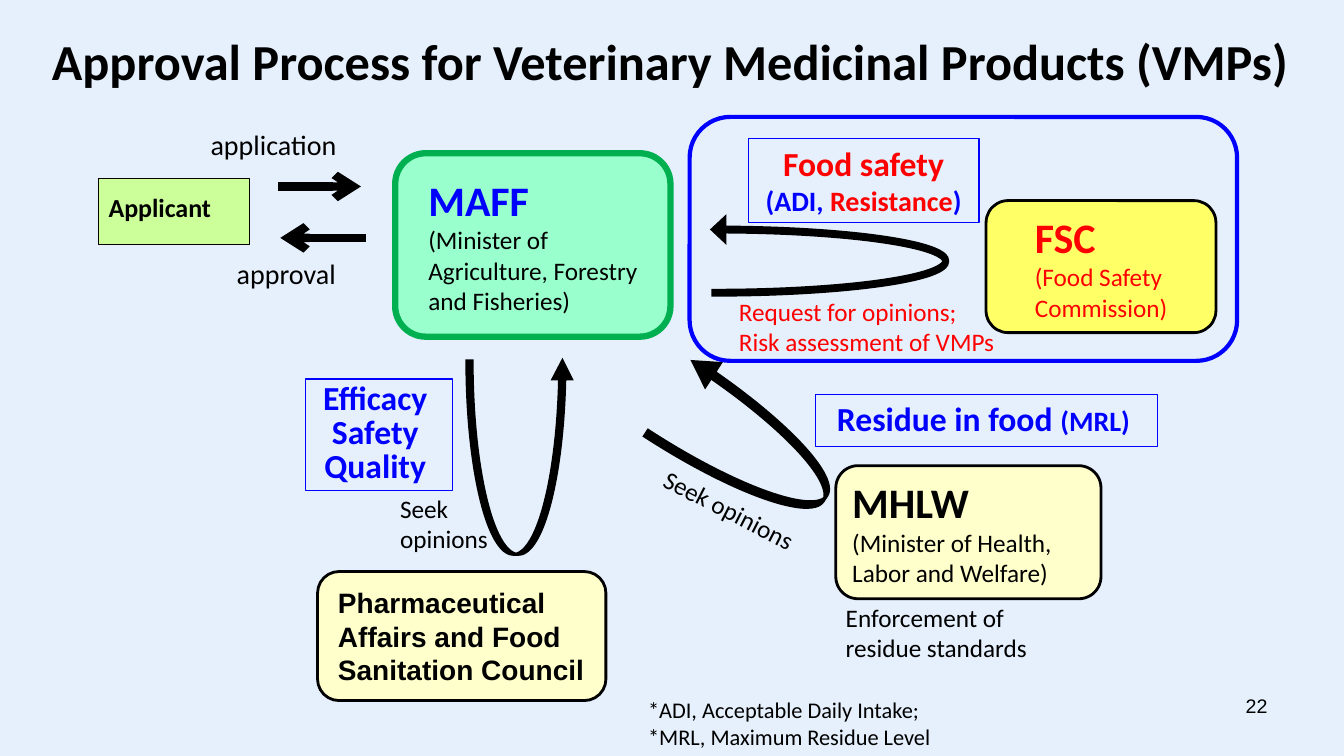
from lxml import etree
from pptx import Presentation
from pptx.dml.color import RGBColor
from pptx.enum import shapes, text
from pptx.oxml import ns
from pptx.util import Inches, Pt

BACKGROUND = RGBColor(0xE5, 0xF0, 0xFC)
BLACK = RGBColor(0, 0, 0)
BLUE = RGBColor(0, 0, 0xFF)
RED = RGBColor(0xFF, 0, 0)
GREEN = RGBColor(0, 0xB0, 0x50)
MINT = RGBColor(0x99, 0xFF, 0xCC)
LIME = RGBColor(0xCC, 0xFF, 0x99)
CREAM = RGBColor(0xFF, 0xFF, 0xCC)
YELLOW = RGBColor(0xFF, 0xFF, 0x66)

SHAPE = shapes.MSO_SHAPE
ALIGN = text.PP_ALIGN
ANCHOR = text.MSO_ANCHOR


def write(shape, paragraphs, size=18, color=BLACK, bold=False, font="Calibri",
          align=ALIGN.LEFT, anchor=ANCHOR.TOP, wrap=True, spacing=None,
          inset=0.1, baseline=None):
    """Fill a shape; a paragraph is a string or a list of (string, overrides)."""
    frame = shape.text_frame
    frame.word_wrap = wrap
    frame.vertical_anchor = anchor
    frame.margin_left = Inches(inset)
    for index, content in enumerate(paragraphs):
        paragraph = frame.add_paragraph() if index else frame.paragraphs[0]
        paragraph.alignment = align
        if spacing:
            paragraph.line_spacing = Pt(spacing)
        runs = [(content, {})] if isinstance(content, str) else content
        for string, overrides in runs:
            run = paragraph.add_run()
            run.text = string
            run.font.name = font
            run.font.size = Pt(overrides.get("size", size))
            run.font.bold = overrides.get("bold", bold)
            run.font.color.rgb = overrides.get("color", color)
            if baseline:
                run.font._element.set("baseline", str(baseline))


def add_box(slide, kind, left, top, width, height, fill=None, line=BLACK, weight=0.75):
    shape = slide.shapes.add_shape(
        kind, Inches(left), Inches(top), Inches(width), Inches(height))
    shape.shadow.inherit = False
    if fill is None:
        shape.fill.background()
    else:
        shape.fill.solid()
        shape.fill.fore_color.rgb = fill
    shape.line.color.rgb = line
    shape.line.width = Pt(weight)
    return shape


def add_label(slide, left, top, width, height, paragraphs, rotation=0, grow=False, **style):
    label = slide.shapes.add_textbox(
        Inches(left), Inches(top), Inches(width), Inches(height))
    label.rotation = rotation
    write(label, paragraphs, **style)
    if grow:
        label.text_frame.auto_size = text.MSO_AUTO_SIZE.SHAPE_TO_FIT_TEXT


def add_body(slide, place, name, role, fill, color=BLACK, line=BLACK, weight=2, inset=0.1):
    """Add a rounded box with an organisation's short name and its role."""
    body = add_box(slide, SHAPE.ROUNDED_RECTANGLE, *place, fill, line, weight)
    write(body, [[(name, {"size": 30, "bold": True})], role],
          color=color, anchor=ANCHOR.MIDDLE, inset=inset)


def add_topic(slide, place, paragraphs, **style):
    topic = add_box(slide, SHAPE.RECTANGLE, *place, line=BLUE)
    write(topic, paragraphs, size=24, color=BLUE, bold=True, align=ALIGN.CENTER, **style)


def add_arrow(slide, start, end, y):
    arrow = slide.shapes.add_connector(
        shapes.MSO_CONNECTOR.STRAIGHT, Inches(start), Inches(y), Inches(end), Inches(y))
    arrow.line.color.rgb = BLACK
    arrow.line.width = Pt(6)
    etree.SubElement(arrow.line._get_or_add_ln(), ns.qn("a:tailEnd"), type="arrow")
    etree.SubElement(arrow._element.spPr, ns.qn("a:effectLst"))


def add_loop(slide, place, rotation, adjustments, weight=2):
    """Add a mirrored, sharp-cornered curved arrow for a request that comes back."""
    loop = add_box(slide, SHAPE.CURVED_DOWN_ARROW, *place, BLACK, BLACK, weight)
    loop.rotation = rotation
    loop._element.spPr.xfrm.set("flipH", "1")
    etree.SubElement(loop.line._get_or_add_ln(), ns.qn("a:miter"), lim="800000")
    for index, value in enumerate(adjustments):
        loop.adjustments[index] = value


def add_applicant(slide):
    applicant = add_box(slide, SHAPE.RECTANGLE, 0.98, 1.77, 1.5, 0.66, LIME)
    write(applicant, ["Applicant"], size=32, bold=True, anchor=ANCHOR.BOTTOM, baseline=30000)
    side_label = dict(size=20, anchor=ANCHOR.MIDDLE)
    add_label(slide, 1.99, 1.26, 1.6, 0.34, ["application"], **side_label)
    add_arrow(slide, 2.76, 3.58, 1.85)
    add_label(slide, 2.25, 2.52, 1.4, 0.39, ["approval"], **side_label)
    add_arrow(slide, 3.63, 2.78, 2.36)


def add_residue_review(slide):
    add_body(slide, (8.29, 4.62, 2.63, 1.32), "MHLW",
             "(Minister of Health, Labor and Welfare)", CREAM)
    add_topic(slide, (8.09, 3.91, 3.39, 0.52),
              [[("Residue in food ", {}), ("(MRL) ", {"size": 20})]],
              anchor=ANCHOR.MIDDLE, spacing=25)
    add_label(slide, 8.29, 6.01, 2.63, 0.53, ["Enforcement of", "residue standards"],
              anchor=ANCHOR.MIDDLE)
    add_loop(slide, (6.93, 3.48, 1.02, 1.84), 123, (0.068, 0.27, 0.235))
    add_label(slide, 6.43, 4.86, 1.62, 0.4, ["Seek opinions"],
              rotation=27.1, grow=True, wrap=False)


def add_food_safety_review(slide):
    add_body(slide, (9.78, 1.99, 2.28, 1.31), "FSC", "(Food Safety Commission)",
             YELLOW, color=RED, inset=0.42)
    add_topic(slide, (7.42, 1.37, 2.29, 0.84), [
        [("Food safety", {"color": RED})],
        [("(ADI, ", {"size": 20}), ("Resistance", {"size": 20, "color": RED}),
         (")", {"size": 20})]])
    add_label(slide, 7.23, 2.89, 2.76, 0.71,
              ["Request for opinions;", "Risk assessment of VMPs"],
              color=RED, grow=True, wrap=False)
    add_loop(slide, (7.88, 1.41, 0.71, 2.29), 90, (0.017, 0.216, 0.115), 4.75)


def add_council_review(slide):
    council = add_box(slide, SHAPE.ROUNDED_RECTANGLE, 3.15, 5.67, 2.86, 1.28, CREAM, weight=2)
    write(council, ["Pharmaceutical Affairs and Food Sanitation Council"], size=20,
          bold=True, font="Arial", anchor=ANCHOR.MIDDLE, inset=0.14)
    add_loop(slide, (4.63, 3.58, 1.04, 1.92), 180, (0.052, 0.176, 0.172))
    add_label(slide, 3.87, 4.84, 1.11, 0.71, ["Seek", "opinions"])
    add_topic(slide, (3.03, 3.76, 1.46, 1.11), ["Efficacy ", "Safety ", "Quality "], spacing=24)


def main():
    presentation = Presentation()
    presentation.slide_width = Inches(13.33)
    presentation.slide_height = Inches(7.5)
    slide = presentation.slides.add_slide(presentation.slide_layouts[6])
    slide.background.fill.solid()
    slide.background.fill.fore_color.rgb = BACKGROUND

    add_body(slide, (3.92, 1.52, 2.73, 1.82), "MAFF",
             [("(Minister of Agriculture, Forestry and Fisheries)", {"color": BLACK})],
             MINT, color=BLUE, line=GREEN, weight=4.5, inset=0.24)
    add_applicant(slide)
    add_residue_review(slide)
    add_food_safety_review(slide)
    add_label(slide, 0.3, 0.13, 12.7, 0.94,
              ["Approval Process for Veterinary Medicinal Products (VMPs)"],
              size=36, bold=True, align=ALIGN.CENTER, anchor=ANCHOR.MIDDLE)
    add_council_review(slide)
    add_label(slide, 6.33, 6.86, 3.77, 0.64,
              ["*ADI, Acceptable Daily Intake;", "*MRL, Maximum Residue Level"], size=16)
    add_label(slide, 9.56, 6.83, 3.11, 0.52, ["22"], size=14, font="Arial", align=ALIGN.RIGHT)
    add_box(slide, SHAPE.ROUNDED_RECTANGLE, 6.84, 1.16, 5.43, 2.42, line=BLUE, weight=3)
    presentation.save("out.pptx")


if __name__ == "__main__":
    main()
